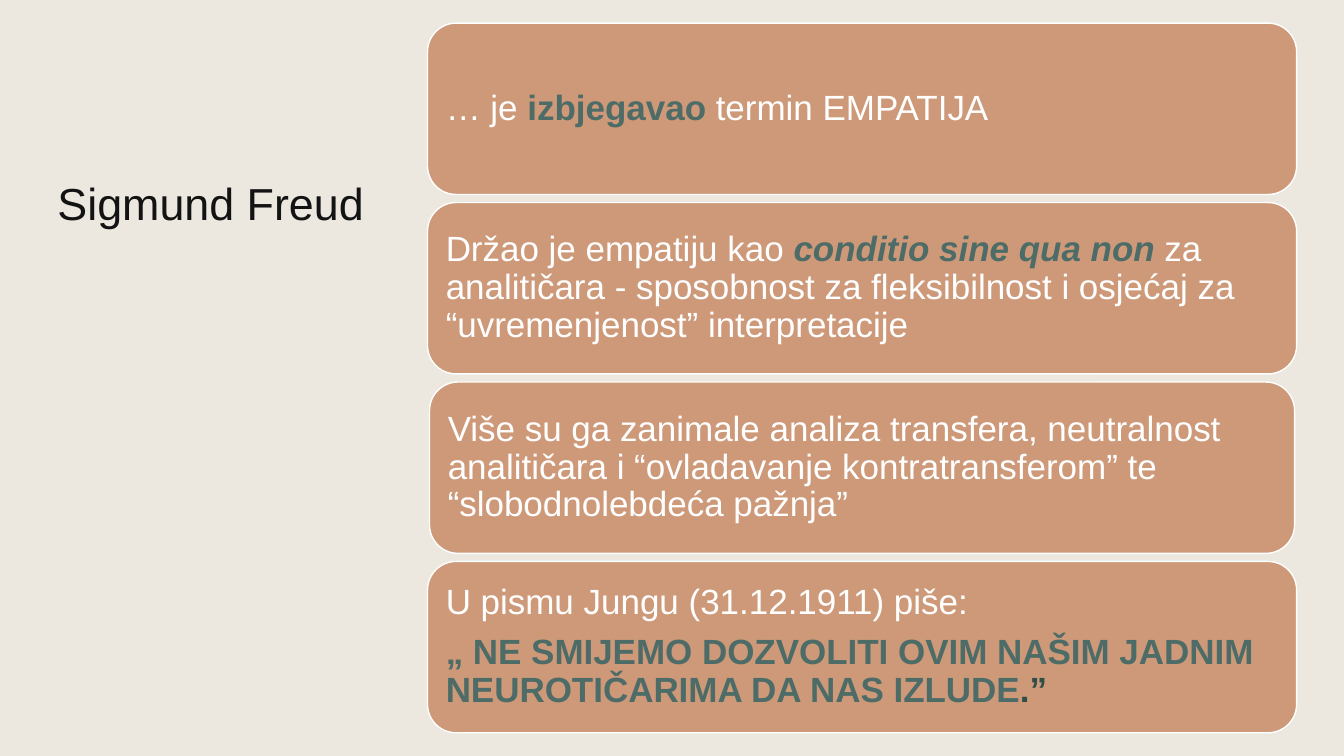
"""Build a slide on Freud and empathy with four stacked cards."""
from pptx import Presentation
from pptx.dml.color import RGBColor
from pptx.enum.shapes import MSO_SHAPE
from pptx.enum.text import MSO_ANCHOR, MSO_AUTO_SIZE, PP_ALIGN
from pptx.util import Inches, Pt

ROUND = MSO_SHAPE.ROUNDED_RECTANGLE
TOP, MIDDLE = MSO_ANCHOR.TOP, MSO_ANCHOR.MIDDLE
LEFT = PP_ALIGN.LEFT
FIXED = MSO_AUTO_SIZE.NONE
COLORS = {"back": "ECE8DF", "ink": "131313", "card": "CD9979",
          "white": "FFFFFF", "teal": "4E6C67", "dark": "304E48"}
STYLES = {
    "title": ("ink", {"size": Pt(32), "bold": False}),
    "plain": ("white", {"size": Pt(25), "bold": False}),
    "strong": ("teal", {"size": Pt(25), "bold": True}),
    "latin": ("teal", {"size": Pt(25), "bold": True, "italic": True}),
    "end": ("dark", {"size": Pt(25), "bold": True}),
}
CARDS = [
    (4.24, 8.62, [[("… je ", "plain"), ("izbjegavao ", "strong"),
                   ("termin EMPATIJA", "plain")]]),
    (4.24, 8.62, [[("Držao je empatiju kao ", "plain"),
                   ("conditio sine qua non ", "latin"),
                   ("za analitičara - sposobnost za fleksibilnost i osjećaj za "
                    "“uvremenjenost” interpretacije", "plain")]]),
    (4.26, 8.58, [[("Više su ga zanimale analiza transfera, neutralnost "
                    "analitičara i “ovladavanje kontratransferom” te "
                    "“slobodnolebdeća pažnja”", "plain")]]),
    (4.24, 8.62, [[("U pismu Jungu (31.12.1911) piše:", "plain")],
                  [("„ NE SMIJEMO DOZVOLITI OVIM NAŠIM JADNIM "
                    "NEUROTIČARIMA DA NAS IZLUDE", "strong"), (".”", "end")]]),
]
FIRST, HIGH, STEP = 0.23, 1.7, 1.78


def color(name):
    return RGBColor.from_string(COLORS[name])


def write(frame, paras, anchor, inset, after):
    frame.word_wrap = True
    frame.auto_size = FIXED
    frame.vertical_anchor = anchor
    for side in ("left", "right", "top", "bottom"):
        setattr(frame, f"margin_{side}", Inches(inset[side in ("top", "bottom")]))
    for i, runs in enumerate(paras):
        para = frame.add_paragraph() if i else frame.paragraphs[0]
        para.alignment = LEFT
        para.line_spacing = 0.9
        para.space_before = Pt(0)
        para.space_after = Pt(after)
        for text, style in runs:
            run = para.add_run()
            run.text = text
            tint, format_values = STYLES[style]
            run.font.name = "Arial"
            run.font.color.rgb = color(tint)
            for key, value in format_values.items():
                setattr(run.font, key, value)


deck = Presentation()
deck.slide_width, deck.slide_height = Inches(13.33), Inches(7.5)
slide = deck.slides.add_slide(deck.slide_layouts[5])
slide.background.fill.solid()
slide.background.fill.fore_color.rgb = color("back")

title = slide.shapes.title
title.left, title.top = Inches(0.47), Inches(1.75)
title.width, title.height = Inches(4.53), Inches(5.07)
write(title.text_frame, [[("Sigmund Freud", "title")]], TOP, (0.1, 0.05), 0)

for row, (left, width, paras) in enumerate(CARDS):
    card = slide.shapes.add_shape(ROUND, Inches(left), Inches(FIRST + row * STEP),
                                  Inches(width), Inches(HIGH))
    card.shadow.inherit = False
    card.fill.solid()
    card.fill.fore_color.rgb = color("card")
    card.line.color.rgb = color("white")
    card.line.width = Pt(1)
    write(card.text_frame, paras, MIDDLE, (0.1, 0.1), 8.75)

deck.save("out.pptx")
